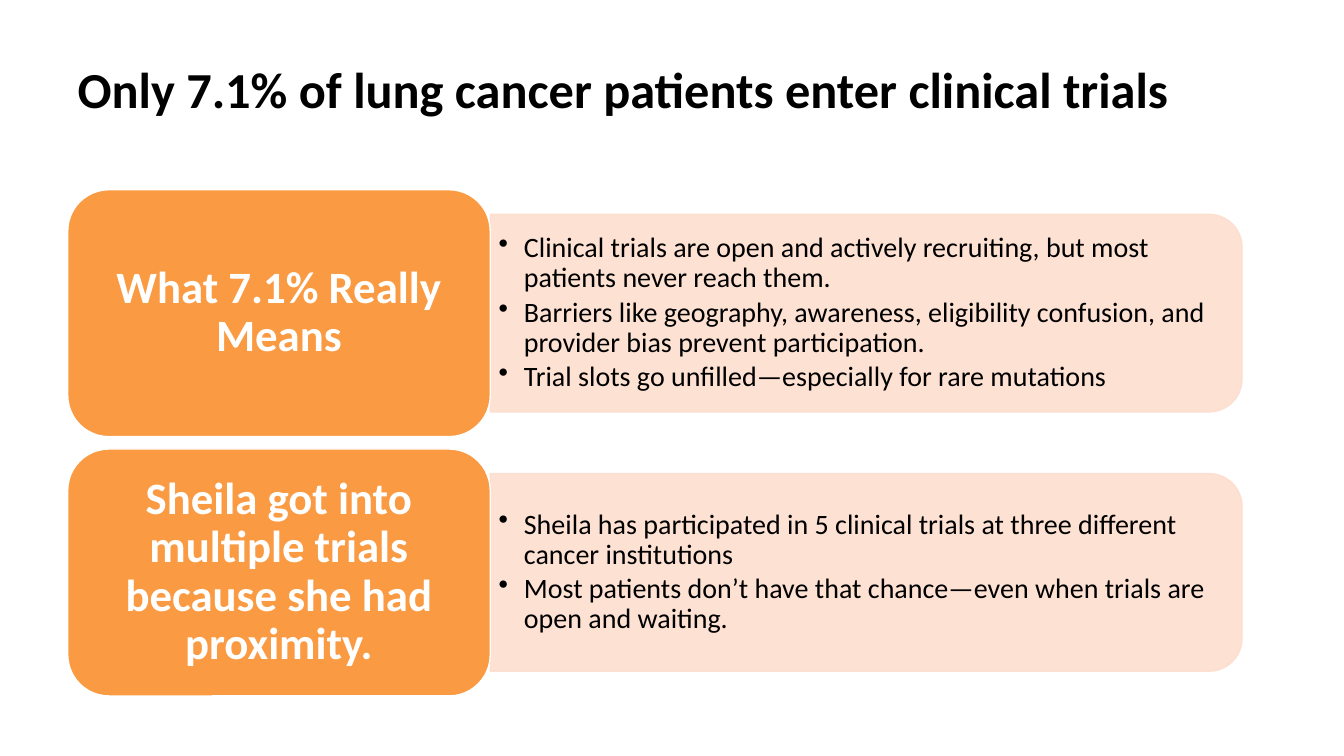
from lxml import etree
from pptx import Presentation
from pptx.dml.color import RGBColor
from pptx.enum.shapes import MSO_SHAPE as Shape
from pptx.enum.text import MSO_ANCHOR as Anchor, PP_ALIGN as Align
from pptx.oxml.ns import qn
from pptx.util import Pt


def color(hex_string):
    return RGBColor.from_string(hex_string)


def write(frame, lines, size, hex_string, bold, space, margins, anchor):
    frame.word_wrap = True
    frame.vertical_anchor = anchor
    frame.margin_left = frame.margin_right = Pt(margins[0])
    frame.margin_top = frame.margin_bottom = Pt(margins[1])
    for index, line in enumerate(lines):
        para = frame.add_paragraph() if index else frame.paragraphs[0]
        para.text = line
        para.line_spacing = 0.9
        para.space_after = Pt(space)
        para.font.name = "Calibri"
        para.font.size = Pt(size)
        para.font.bold = bold
        para.font.color.rgb = color(hex_string)


ROWS = [
    ("What 7.1% Really Means", [
        "Clinical trials are open and actively recruiting, but most patients never reach them.",
        "Barriers like geography, awareness, eligibility confusion, and provider bias prevent participation.",
        "Trial slots go unfilled—especially for rare mutations",
    ]),
    ("Sheila got into multiple trials because she had proximity.", [
        "Sheila has participated in 5 clinical trials at three different cancer institutions",
        "Most patients don’t have that chance—even when trials are open and waiting.",
    ]),
]
LEFT, TOP, ROW_STEP = 48.4, 135.5, 185.2
CARD_WIDTH, CARD_HEIGHT = 301.8, 176.4
PANEL_WIDTH, PANEL_HEIGHT = 537, 141.1
BODY_WIDTH, BODY_HEIGHT = 530, 127.4

deck = Presentation()
deck.slide_width, deck.slide_height = Pt(960), Pt(540)
page = deck.slides.add_slide(deck.slide_layouts[6])

title = page.shapes.add_textbox(Pt(LEFT), Pt(43.2), Pt(839), Pt(89.3))
write(title.text_frame, ["Only 7.1% of lung cancer patients enter clinical trials"],
      36, "000000", True, 0, (7.2, 3.6), Anchor.TOP)

panel_left = LEFT + CARD_WIDTH
for row, (heading, points) in enumerate(ROWS):
    card_top = TOP + row * ROW_STEP
    middle = card_top + CARD_HEIGHT / 2

    panel = page.shapes.add_shape(
        Shape.ROUND_2_SAME_RECTANGLE,
        Pt(panel_left + (PANEL_WIDTH - PANEL_HEIGHT) / 2), Pt(middle - PANEL_WIDTH / 2),
        Pt(PANEL_HEIGHT), Pt(PANEL_WIDTH))
    panel.rotation = 90
    panel.shadow.inherit = False
    panel.fill.solid()
    panel.fill.fore_color.rgb = color("FDDECF")
    panel.line.color.rgb = color("FDDECF")
    panel.line.width = Pt(1)
    for tone in panel._element.spPr.iter(qn("a:srgbClr")):
        etree.SubElement(tone, qn("a:alpha"), val="90000")

    body = page.shapes.add_textbox(
        Pt(panel_left), Pt(middle - BODY_HEIGHT / 2), Pt(BODY_WIDTH), Pt(BODY_HEIGHT))
    write(body.text_frame, points, 20, "000000", False, 3, (6, 3), Anchor.MIDDLE)
    for para in body.text_frame.paragraphs:
        settings = para._p.get_or_add_pPr()
        settings.set("marL", str(Pt(18)))
        settings.set("indent", str(Pt(-18)))
        bullet = etree.Element(qn("a:buChar"), char="•")
        settings.find(qn("a:defRPr")).addprevious(bullet)

    card = page.shapes.add_shape(
        Shape.ROUNDED_RECTANGLE, Pt(LEFT), Pt(card_top), Pt(CARD_WIDTH), Pt(CARD_HEIGHT))
    card.shadow.inherit = False
    card.fill.solid()
    card.fill.fore_color.rgb = color("FA9A42")
    card.line.color.rgb = color("FFFFFF")
    card.line.width = Pt(1)
    write(card.text_frame, [heading], 32, "FFFFFF", True, 0, (9.6, 4.8), Anchor.MIDDLE)
    card.text_frame.paragraphs[0].alignment = Align.CENTER

deck.save("out.pptx")
